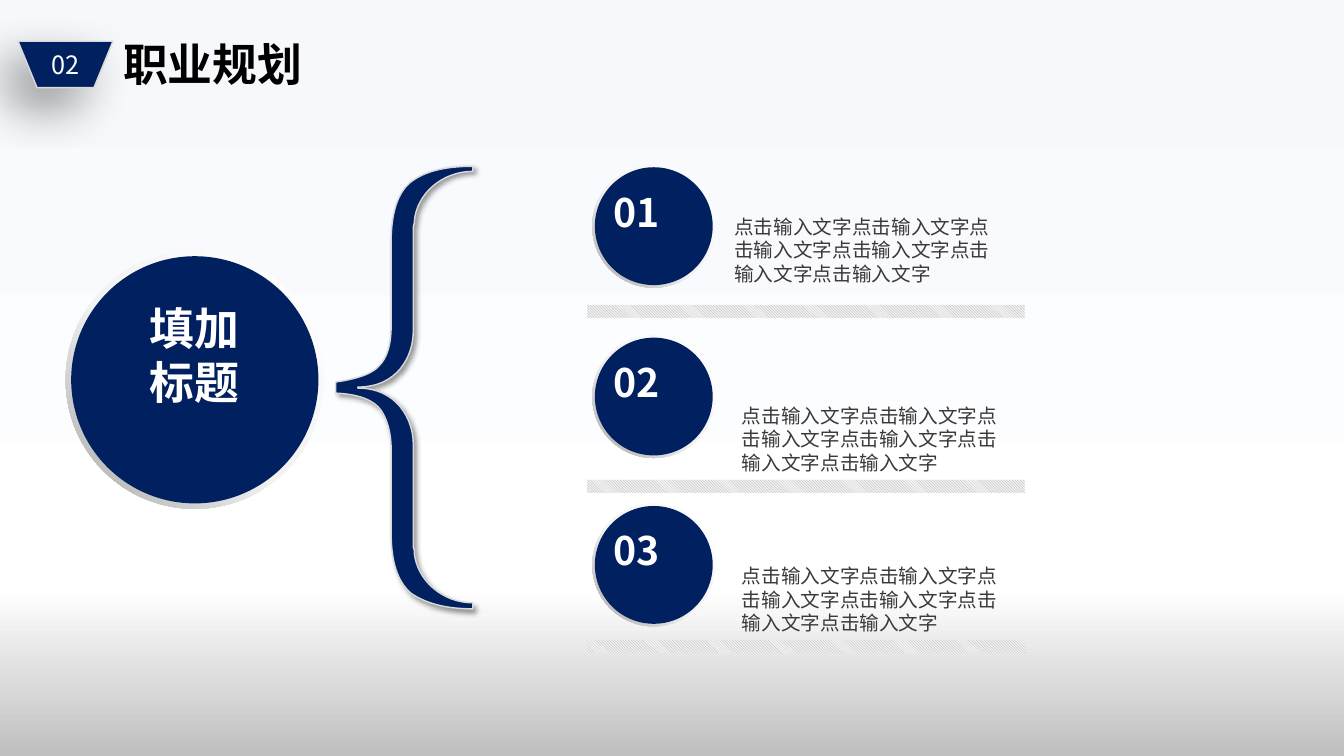
import dataclasses

import lxml.etree
import pptx
import pptx.dml.color
import pptx.enum.dml
import pptx.enum.shapes
import pptx.enum.text
import pptx.oxml.ns
import pptx.util

SHAPE = pptx.enum.shapes.MSO_SHAPE
ALIGN = pptx.enum.text.PP_ALIGN
ANCHOR = pptx.enum.text.MSO_ANCHOR
AUTO_SIZE = pptx.enum.text.MSO_AUTO_SIZE
qn = pptx.oxml.ns.qn

SLIDE_WIDTH = pptx.util.Inches(13.33)
SLIDE_HEIGHT = pptx.util.Inches(7.5)
CELL = SLIDE_HEIGHT // 75  # square grid: 75 rows down the slide


@dataclasses.dataclass(frozen=True)
class Theme:
    font: str = "Noto Sans CJK SC"
    navy: str = "002060"
    white: str = "FFFFFF"
    black: str = "000000"
    body: str = "3B3838"
    edge: str = "D9D9D9"
    hatch: str = "A6A6A6"
    hatch_back: str = "F2F2F2"
    backdrop: tuple = ((0, "F6F8FC"), (78, "FFFFFF"), (100, "BFBFBF"))
    ring: tuple = ((0, "FFFFFF"), (55, "F2F2F2"), (100, "A6A6A6"))
    heading_size: int = 32
    number_size: int = 28
    tag_size: int = 18
    body_size: int = 14


THEME = Theme()

BODY_TEXT = "点击输入文字" * 6
# number, badge row, text column, text row, divider row
ITEMS = (
    ("01", 16.34, 71.85, 20.8, 30.25),
    ("02", 33.24, 72.6, 39.56, 47.6),
    ("03", 49.94, 72.6, 55.45, 63.5),
)

# Each step holds one point (straight) or three points (cubic curve), in cells
BRACE_START = (46.9, 16.5)
BRACE_STEPS = (
    ((46.9, 17),),
    ((43.9, 17), (41.3, 19.2), (41.1, 22)),
    ((41.1, 22), (41.1, 22.1), (41.1, 22.1)),
    ((41, 22.5),),
    ((41, 22.5), (41, 22.5), (41, 22.6)),
    ((41, 22.8), (41, 23), (41, 23.3)),
    ((41, 32.8),),
    ((41, 35.4), (39.4, 38.4), (35.5, 38.4)),
    ((35.5, 38.5),),
    ((39.3, 38.5), (41, 41.5), (41, 44.1)),
    ((41, 53.6),),
    ((41, 54.2),),
    ((41, 54.3),),
    ((41, 54.4), (41, 54.5), (41.1, 54.6)),
    ((41.1, 54.7), (41.1, 54.8), (41.1, 54.9)),
    ((41.4, 57.6), (43.9, 59.8), (46.9, 59.8)),
    ((46.9, 60.4),),
    ((44.1, 60.4), (42.1, 59.8), (40.7, 58.8)),
    ((39.4, 57.6), (38.8, 55.7), (38.8, 52.8)),
    ((38.8, 44.5),),
    ((38.8, 42.9), (38.4, 41.6), (37.8, 40.7)),
    ((37.1, 39.7), (35.6, 39.1), (33.3, 39)),
    ((33.3, 37.9),),
    ((35.4, 37.6), (36.9, 37.1), (37.6, 36.3)),
    ((38.4, 35.5), (38.8, 34.2), (38.8, 32.4)),
    ((38.8, 24.1),),
    ((38.8, 21.2), (39.4, 19.2), (40.7, 18.1)),
    ((42.1, 17), (44.1, 16.5), BRACE_START),
)


def cells(*counts):
    return [round(count * CELL) for count in counts]


def rgb(value):
    return pptx.dml.color.RGBColor.from_string(value)


def write(frame, text, *, size, color, bold=False, align=ALIGN.LEFT,
          anchor=ANCHOR.TOP, wrap=True, grow=True, inset=None):
    """Fill a text frame; each line of the text becomes a paragraph."""
    frame.text = text
    frame.word_wrap = wrap
    frame.vertical_anchor = anchor
    frame.auto_size = AUTO_SIZE.SHAPE_TO_FIT_TEXT if grow else AUTO_SIZE.NONE
    if inset is not None:
        frame.margin_left = frame.margin_right = inset
        frame.margin_top = frame.margin_bottom = inset
    for paragraph in frame.paragraphs:
        paragraph.alignment = align
        for run in paragraph.runs:
            run.font.name = THEME.font
            run.font.size = pptx.util.Pt(size)
            run.font.bold = bold
            run.font.color.rgb = rgb(color)
            east_asian = lxml.etree.Element(qn("a:ea"), typeface=THEME.font)
            run.font._element.find(qn("a:latin")).addnext(east_asian)


def add_text(shapes, box, text, **text_format):
    write(shapes.add_textbox(*cells(*box)).text_frame, text, **text_format)


def paint_gradient(fill, owner, stops, angle):
    """Set stops in percent and an angle counted clockwise."""
    fill.gradient()
    fill.gradient_angle = 360 - angle
    stop_list = next(owner.iter(qn("a:gsLst")))
    for old_stop in list(stop_list):
        stop_list.remove(old_stop)
    for position, color in stops:
        stop = lxml.etree.SubElement(stop_list, qn("a:gs"), pos=str(position * 1000))
        lxml.etree.SubElement(stop, qn("a:srgbClr"), val=color)


def add_flat(shapes, kind, box):
    shape = shapes.add_shape(kind, *cells(*box))
    shape.shadow.inherit = False
    shape.line.fill.background()
    return shape


def fill_navy(shape):
    shape.fill.solid()
    shape.fill.fore_color.rgb = rgb(THEME.navy)


def raise_panel(shape, blur, distance, angle):
    """Give a navy shape its pale edge and a cast shadow."""
    fill_navy(shape)
    shape.line.color.rgb = rgb(THEME.edge)
    shape.line.width = pptx.util.Pt(1)
    shape.shadow.inherit = False
    effects = shape._element.spPr.find(qn("a:effectLst"))
    shadow = lxml.etree.SubElement(
        effects, qn("a:outerShdw"), blurRad=str(pptx.util.Pt(blur)),
        dist=str(pptx.util.Pt(distance)), dir=str(angle * 60000),
        algn="ctr", rotWithShape="0")
    color = lxml.etree.SubElement(shadow, qn("a:srgbClr"), val=THEME.black)
    lxml.etree.SubElement(color, qn("a:alpha"), val="40000")


def add_badge(shapes, left, top, size):
    """Group a navy disc with the shaded ring around it."""
    badge = shapes.add_group_shape().shapes
    ring = add_flat(badge, SHAPE.DONUT, (left, top, size, size))
    ring.adjustments[0] = 0.049
    paint_gradient(ring.fill, ring._element, THEME.ring, 135)
    inset = size * 0.021
    disc = size - 2 * inset
    fill_navy(add_flat(badge, SHAPE.OVAL, (left + inset, top + inset, disc, disc)))


def add_divider(shapes, top):
    divider = add_flat(shapes, SHAPE.RECTANGLE, (58.24, top, 43.4, 1.3))
    divider.fill.patterned()
    divider.fill.pattern = pptx.enum.dml.MSO_PATTERN.LIGHT_DOWNWARD_DIAGONAL
    divider.fill.fore_color.rgb = rgb(THEME.hatch)
    divider.fill.back_color.rgb = rgb(THEME.hatch_back)


def add_brace(shapes):
    """Outline the brace by its corners, then bend the curved segments."""
    builder = shapes.build_freeform(*cells(*BRACE_START))
    builder.add_line_segments([cells(*step[-1]) for step in BRACE_STEPS], close=True)
    brace = builder.convert_to_shape()
    segments = list(brace._element.iter(qn("a:lnTo")))
    for segment, step in zip(segments, BRACE_STEPS):
        if len(step) == 1:
            continue
        curve = lxml.etree.Element(qn("a:cubicBezTo"))
        for x, y in (cells(*point) for point in step):
            lxml.etree.SubElement(curve, qn("a:pt"), x=str(x - brace.left),
                                  y=str(y - brace.top))
        segment.getparent().replace(segment, curve)
    raise_panel(brace, blur=4, distance=3, angle=45)


def add_header(shapes):
    title = shapes.title
    title.left, title.top, title.width, title.height = cells(11.2, 3.12, 42, 6.4)
    write(title.text_frame, "职业规划", size=THEME.heading_size,
          color=THEME.black, bold=True)
    tag = add_flat(shapes, SHAPE.FLOWCHART_MANUAL_OPERATION, (1.8, 4.1, 9.4, 4.6))
    raise_panel(tag, blur=35, distance=20, angle=135)
    write(tag.text_frame, "02", size=THEME.tag_size, color=THEME.white,
          align=ALIGN.CENTER, anchor=ANCHOR.MIDDLE, grow=False)


def add_item(shapes, number, badge_top, text_left, text_top, divider_top):
    add_divider(shapes, divider_top)
    add_badge(shapes, 58.74, badge_top, 12.2)
    add_text(shapes, (59.9, badge_top + 1.82, 6.9, 5.7), number,
             size=THEME.number_size, color=THEME.white, bold=True, wrap=False)
    add_text(shapes, (text_left, text_top, 28.6, 8.1), BODY_TEXT,
             size=THEME.body_size, color=THEME.body)


def main():
    deck = pptx.Presentation()
    deck.slide_width, deck.slide_height = SLIDE_WIDTH, SLIDE_HEIGHT
    slide = deck.slides.add_slide(deck.slide_layouts.get_by_name("Title Only"))
    paint_gradient(slide.background.fill, slide._element, THEME.backdrop, 90)
    shapes = slide.shapes
    add_header(shapes)
    add_brace(shapes)
    add_badge(shapes, 6.52, 24.88, 25.6)
    add_text(shapes, (7.7, 29.84, 23.2, 10.8), "填加\n标题", size=THEME.heading_size,
             color=THEME.white, bold=True, align=ALIGN.CENTER, inset=0)
    for item in ITEMS:
        add_item(shapes, *item)
    deck.save("out.pptx")


if __name__ == "__main__":
    main()
